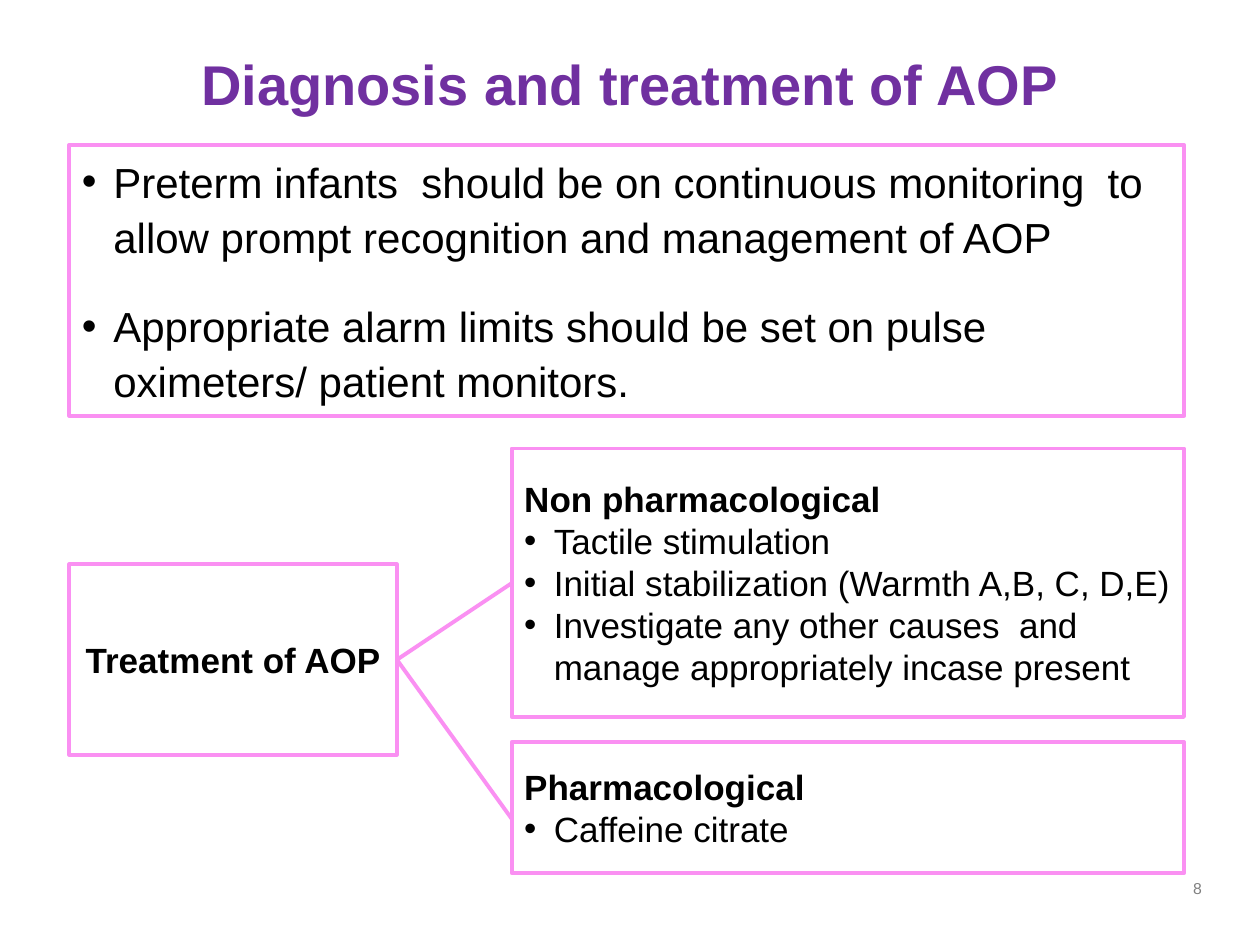
from lxml import etree
from pptx import Presentation
from pptx import util as u
from pptx.dml.color import RGBColor
from pptx.enum import shapes, text
from pptx.oxml.ns import qn

PURPLE = RGBColor(0x70, 0x30, 0xA0)
PINK = RGBColor(0xFA, 0x90, 0xF2)
BLACK = RGBColor(0, 0, 0)
GRAY = RGBColor(0x80, 0x80, 0x80)

LEFT, RIGHT = 39.6, 676.6
BRANCH_LEFT = 292.5
BRANCH_WIDTH = RIGHT - BRANCH_LEFT
CAUSE_WIDTH = 187.2

MONITORING = [
    "Preterm infants  should be on continuous monitoring  to allow prompt "
    "recognition and management of AOP",
    "Appropriate alarm limits should be set on pulse oximeters/ patient monitors.",
]
NON_PHARMACOLOGICAL = [
    "Tactile stimulation",
    "Initial stabilization (Warmth A,B, C, D,E)",
    "Investigate any other causes  and manage appropriately incase present",
]
PHARMACOLOGICAL = ["Caffeine citrate"]


def set_values(target, values):
    for name, value in values.items():
        setattr(target, name, value)


def place(shape, left, top, width, height):
    values = dict(left=left, top=top, width=width, height=height)
    set_values(shape, {name: u.Pt(value) for name, value in values.items()})


def set_frame(frame, anchor, side=7.2, edge=3.6):
    set_values(frame, dict(
        word_wrap=True, auto_size=text.MSO_AUTO_SIZE.NONE, vertical_anchor=anchor,
        margin_left=u.Pt(side), margin_right=u.Pt(side),
        margin_top=u.Pt(edge), margin_bottom=u.Pt(edge)))


def add_bullet(paragraph, indent):
    properties = paragraph._p.get_or_add_pPr()
    properties.set("marL", str(u.Pt(indent)))
    properties.set("indent", str(u.Pt(-indent)))
    etree.SubElement(properties, qn("a:buFont"), typeface="Arial")
    etree.SubElement(properties, qn("a:buChar"), char="•")


def write_paragraph(frame, wording, size, color=BLACK, bold=False, indent=0, **layout):
    """Fill the frame's first paragraph if it is empty, otherwise append one."""
    first = frame.paragraphs[0]
    paragraph = frame.add_paragraph() if first.runs else first
    if indent:
        add_bullet(paragraph, indent)
    spacing = dict(alignment=text.PP_ALIGN.LEFT, line_spacing=1.0,
                   space_before=u.Pt(0), space_after=u.Pt(0))
    set_values(paragraph, spacing | layout)
    run = paragraph.add_run()
    run.text = wording
    set_values(run.font, dict(name="Arial", size=u.Pt(size), bold=bold))
    run.font.color.rgb = color


def outline(shape):
    shape.line.color.rgb = PINK
    shape.line.width = u.Pt(2.25)


def add_title(slide):
    title = slide.shapes.title
    place(title, 75, 28.8, 570, 42.5)
    set_frame(title.text_frame, text.MSO_ANCHOR.MIDDLE)
    write_paragraph(title.text_frame, "Diagnosis and treatment of AOP", 32, PURPLE,
                    bold=True, alignment=text.PP_ALIGN.CENTER, line_spacing=0.9)


def add_monitoring_list(slide):
    body = slide.placeholders[1]
    place(body, LEFT, 82.8, RIGHT - LEFT, 154.8)
    outline(body)
    set_frame(body.text_frame, text.MSO_ANCHOR.TOP)
    for index, wording in enumerate(MONITORING):
        write_paragraph(body.text_frame, wording, 24, indent=18, line_spacing=1.1,
                        space_before=u.Pt(10 if index else 0), space_after=u.Pt(9))


def add_box(slide, position, heading, items=(), alignment=text.PP_ALIGN.LEFT):
    box = slide.shapes.add_shape(shapes.MSO_SHAPE.RECTANGLE, *map(u.Pt, position))
    box.shadow.inherit = False
    box.fill.background()
    outline(box)
    set_frame(box.text_frame, text.MSO_ANCHOR.MIDDLE)
    write_paragraph(box.text_frame, heading, 20, bold=True, alignment=alignment)
    for item in items:
        write_paragraph(box.text_frame, item, 20, indent=16.9)


def add_branch(slide, start, end):
    line = slide.shapes.add_connector(
        shapes.MSO_CONNECTOR.STRAIGHT, *map(u.Pt, start + end))
    outline(line)
    etree.SubElement(line._element.spPr, qn("a:effectLst"))


def add_page_number(slide):
    box = slide.shapes.add_textbox(*map(u.Pt, (676.8, 494, 43.2, 27.4)))
    set_frame(box.text_frame, text.MSO_ANCHOR.MIDDLE, side=5, edge=2.9)
    write_paragraph(box.text_frame, "8", 9, GRAY)


def main():
    presentation = Presentation()
    presentation.slide_width, presentation.slide_height = u.Pt(720), u.Pt(540)
    slide = presentation.slides.add_slide(presentation.slide_layouts[1])
    add_page_number(slide)
    add_title(slide)
    add_monitoring_list(slide)
    add_box(slide, (BRANCH_LEFT, 256.3, BRANCH_WIDTH, 153.4),
            "Non pharmacological", NON_PHARMACOLOGICAL)
    add_box(slide, (BRANCH_LEFT, 424, BRANCH_WIDTH, 75),
            "Pharmacological", PHARMACOLOGICAL)
    add_box(slide, (LEFT, 322.5, CAUSE_WIDTH, 108.8),
            "Treatment of AOP", alignment=text.PP_ALIGN.CENTER)
    for end_height in (333.2, 468):
        add_branch(slide, (LEFT + CAUSE_WIDTH, 377), (BRANCH_LEFT, end_height))
    presentation.save("out.pptx")


if __name__ == "__main__":
    main()
